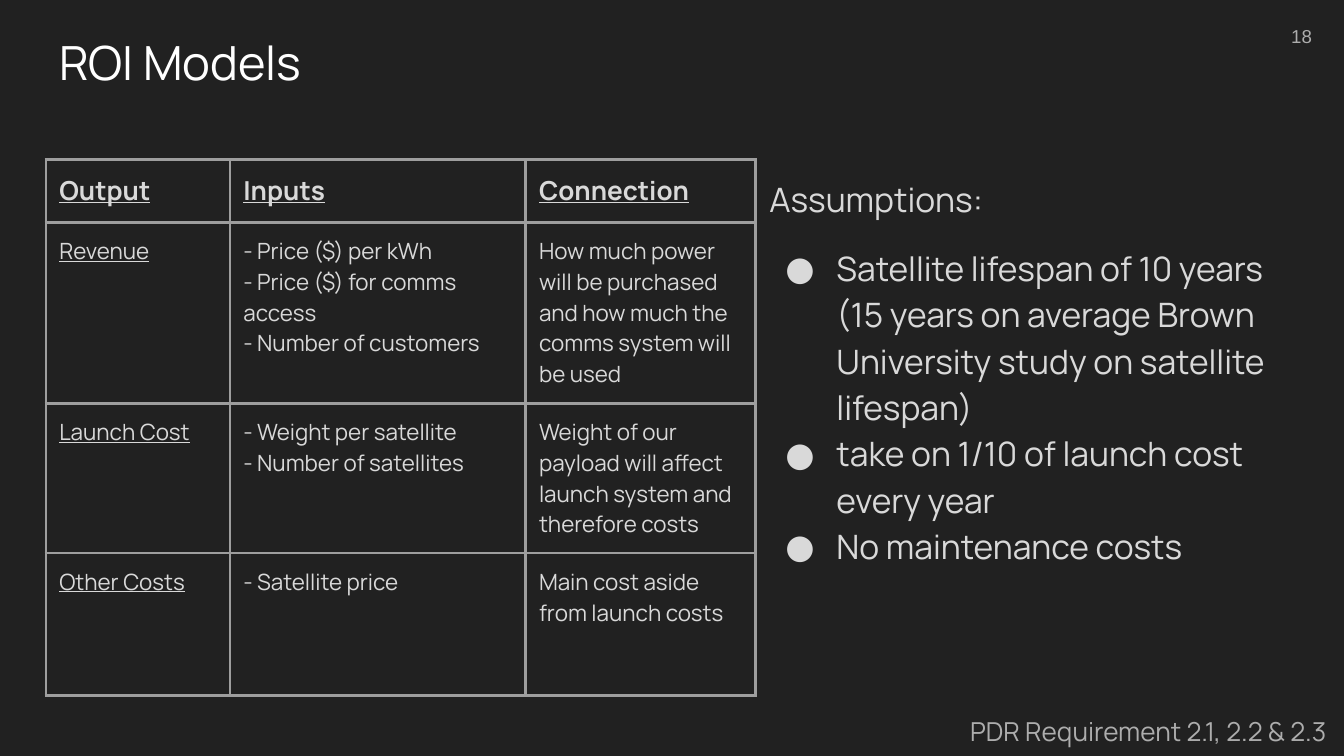
import pptx
import pptx.dml.color
import pptx.enum.text
import pptx.oxml
import pptx.oxml.ns
import pptx.util

WIDE = 10
HIGH = WIDE * 9 / 16
FACE = "Manrope"
HUES = {"back": "212121", "title": "FFFFFF", "text": "D9D9D9",
        "faint": "ADADAD", "rule": "9E9E9E"}
ALIGN = pptx.enum.text.PP_ALIGN
ANCHOR = pptx.enum.text.MSO_ANCHOR

# Column widths and row heights, in percent of the slide
COLS = [13.7, 22, 17.1]
ROWS = [8.33, 23.94, 19.81, 18.84]
CELLS = [
    ["Output", "Inputs", "Connection"],
    ["Revenue",
     "- Price ($) per kWh\n- Price ($) for comms access\n- Number of customers",
     "How much power will be purchased and how much the comms system will be used"],
    ["Launch Cost",
     "- Weight per satellite\n- Number of satellites",
     "Weight of our payload will affect launch system and therefore costs"],
    ["Other Costs", "- Satellite price", "Main cost aside from launch costs"],
]
POINTS = [
    "Satellite lifespan of 10 years (15 years on average Brown "
    "University study on satellite lifespan)",
    "take on 1/10 of launch cost every year",
    "No maintenance costs",
]


def across(share):
    return pptx.util.Inches(WIDE * share / 100)


def down(share):
    return pptx.util.Inches(HIGH * share / 100)


def color(name):
    return pptx.dml.color.RGBColor.from_string(HUES[name])


def write(frame, text, size=12, hue="text", face=FACE, bold=False, line=False,
          align=ALIGN.LEFT, space=None):
    """Fill a text frame, one paragraph for each line of text."""
    frame.text = text
    for para in frame.paragraphs:
        para.alignment = align
        if space:
            para.line_spacing = space
        for run in para.runs:
            font = run.font
            font.size, font.name = pptx.util.Pt(size), face
            font.bold, font.underline = bold, line
            font.color.rgb = color(hue)


def pad(item):
    gap = pptx.util.Inches(0.1)
    item.margin_left = item.margin_right = gap
    item.margin_top = item.margin_bottom = gap


def box(slide, left, top, width, height, text, anchor=ANCHOR.TOP, **style):
    shape = slide.shapes.add_textbox(
        across(left), down(top), across(width), down(height))
    frame = shape.text_frame
    frame.word_wrap = True
    frame.vertical_anchor = anchor
    pad(frame)
    write(frame, text, **style)
    return frame


def bullet(para):
    props = para._p.get_or_add_pPr()
    props.set("marL", str(pptx.util.Inches(0.5)))
    props.set("indent", str(pptx.util.Inches(-0.38)))
    space = pptx.oxml.ns.nsdecls("a")
    for part in (f'<a:buClr {space}><a:srgbClr val="{HUES["text"]}"/></a:buClr>',
                 f'<a:buFont {space} typeface="{FACE}"/>',
                 f'<a:buChar {space} char="●"/>'):
        props.append(pptx.oxml.parse_xml(part))


def border(cell):
    props = cell._tc.get_or_add_tcPr()
    space = pptx.oxml.ns.nsdecls("a")
    for spot, side in enumerate("LRTB"):
        props.insert(spot, pptx.oxml.parse_xml(
            f'<a:ln{side} {space} w="{pptx.util.Pt(1.5)}"><a:solidFill>'
            f'<a:srgbClr val="{HUES["rule"]}"/></a:solidFill></a:ln{side}>'))


def grid(slide, left, top):
    table = slide.shapes.add_table(
        len(ROWS), len(COLS), across(left), down(top),
        across(sum(COLS)), down(sum(ROWS))).table
    table.first_row = table.horz_banding = False
    for col, share in zip(table.columns, COLS):
        col.width = across(share)
    for row, share in zip(table.rows, ROWS):
        row.height = down(share)
    for r, texts in enumerate(CELLS):
        for c, text in enumerate(texts):
            cell = table.cell(r, c)
            head = r == 0
            pad(cell)
            cell.fill.background()
            write(cell.text_frame, text, size=14 if head else 12,
                  bold=head, line=head or c == 0)
            border(cell)


def main():
    deck = pptx.Presentation()
    deck.slide_width, deck.slide_height = across(100), down(100)
    slide = deck.slides.add_slide(deck.slide_layouts[6])
    fill = slide.background.fill
    fill.solid()
    fill.fore_color.rgb = color("back")

    # Title
    box(slide, 3.41, 2.7, 93.2, 11.2, "ROI Models", size=25.2, hue="title")

    # Assumptions, with a bullet on all but the first line
    frame = box(slide, 56.25, 21.12, 41.2, 68.27,
                "\n".join(["Assumptions:"] + POINTS), size=18, space=1.15)
    items = frame.paragraphs[1:]
    items[0].space_before = pptx.util.Pt(12)
    for para in items:
        bullet(para)

    # Page number
    box(slide, 92.6, 1, 6, 7.64, "18", anchor=ANCHOR.MIDDLE, size=10,
        hue="faint", face="Arial", align=ALIGN.RIGHT)

    # Model table
    grid(slide, 3.41, 21.08)

    # Requirement note
    box(slide, 71.2, 92.85, 32.4, 7.82, "PDR Requirement 2.1, 2.2 & 2.3",
        size=14, hue="faint")
    deck.save("out.pptx")


if __name__ == "__main__":
    main()
